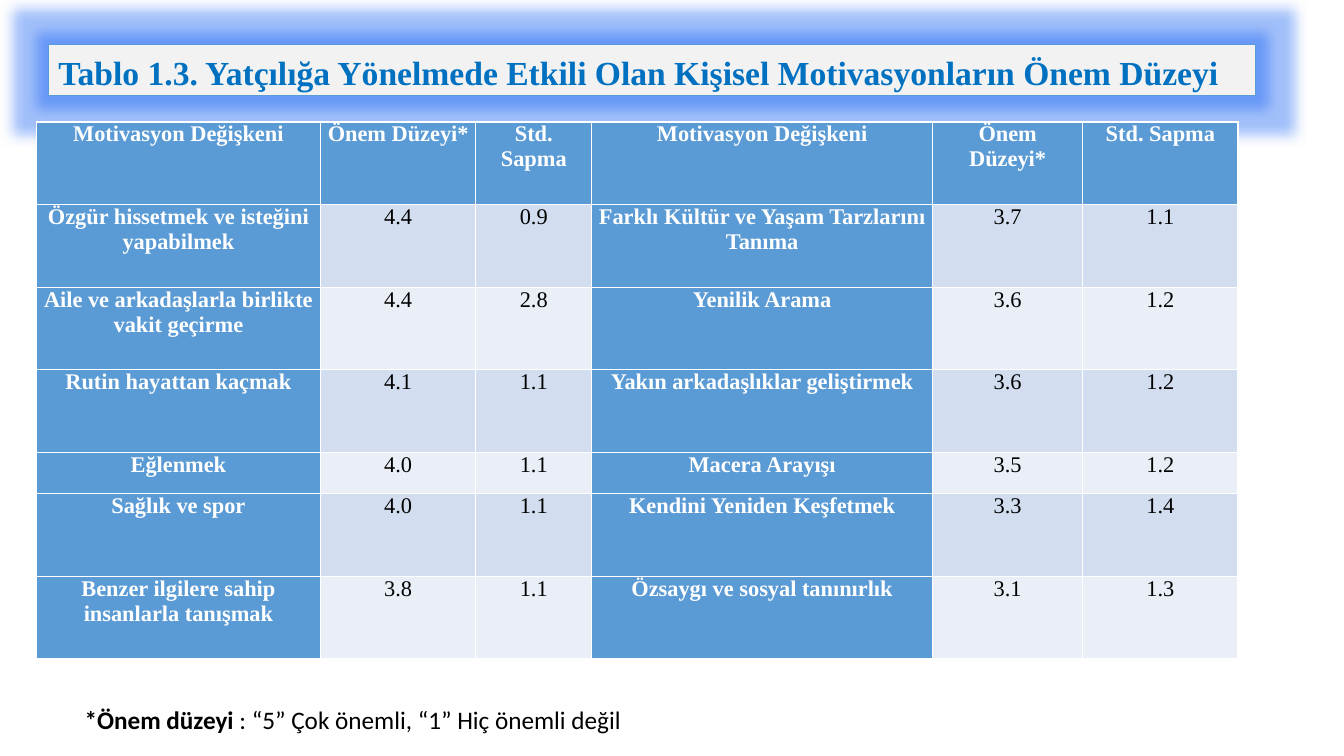
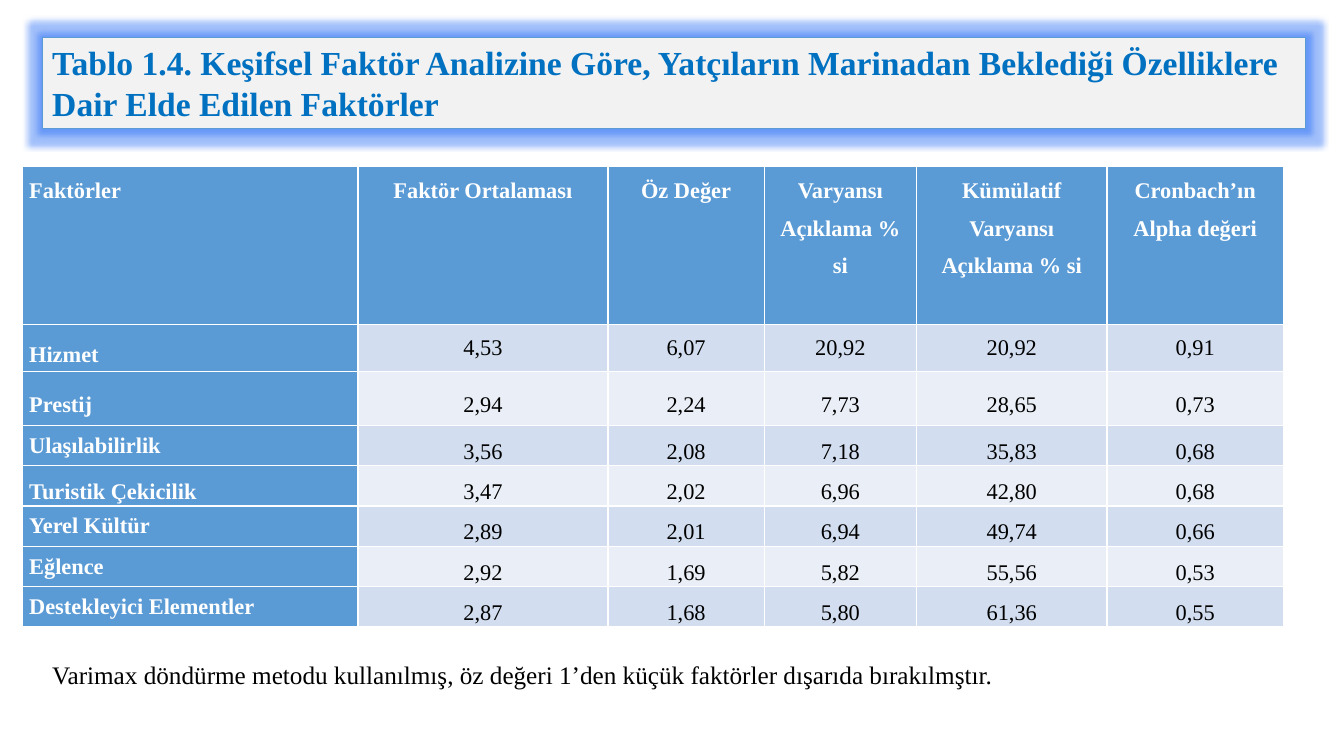
from lxml import etree
from pptx import Presentation
from pptx.dml.color import RGBColor
from pptx.enum.shapes import MSO_SHAPE
from pptx.enum.text import MSO_ANCHOR, MSO_AUTO_SIZE, PP_ALIGN
from pptx.oxml.ns import qn
from pptx.util import Inches, Pt

RECT = MSO_SHAPE.RECTANGLE
TOP, MIDDLE = MSO_ANCHOR.TOP, MSO_ANCHOR.MIDDLE
GROW = MSO_AUTO_SIZE.SHAPE_TO_FIT_TEXT
LEFT, CENTER, JUSTIFY = PP_ALIGN.LEFT, PP_ALIGN.CENTER, PP_ALIGN.JUSTIFY

WHITE = RGBColor(0xFF, 0xFF, 0xFF)
BLACK = RGBColor(0x00, 0x00, 0x00)
BLUE = RGBColor(0x5B, 0x9B, 0xD5)
INK = RGBColor(0x00, 0x70, 0xC0)
GREY = RGBColor(0xF2, 0xF2, 0xF2)
BANDS = RGBColor(0xD2, 0xDE, 0xEF), RGBColor(0xEA, 0xEF, 0xF7)
GLOW = RGBColor(0x14, 0x60, 0xF4)
SERIF, SANS = "Times New Roman", "Calibri"

# Font formats
TITLE = {"name": SERIF, "size": Pt(24), "bold": True, "color": INK}
HEAD = {"name": SERIF, "size": Pt(16), "bold": True, "color": WHITE}
VALUE = {**HEAD, "bold": False, "color": BLACK}
NOTE = {"name": SERIF, "size": Pt(18), "bold": False, "color": BLACK}
PLAIN = {**NOTE, "name": SANS}
STRONG = {**PLAIN, "bold": True}


class Deck:
    def __init__(self):
        self.prs = Presentation()
        self.prs.slide_width = Inches(13.33)
        self.prs.slide_height = Inches(7.5)
        self.slide = None

    def add(self):
        self.slide = self.prs.slides.add_slide(self.prs.slide_layouts[6])

    def fill_para(self, para, runs, **form):
        for key, value in form.items():
            setattr(para, key, value)
        for text, font in runs:
            run = para.add_run()
            run.text = text
            for key, value in font.items():
                if key == "color":
                    run.font.color.rgb = value
                else:
                    setattr(run.font, key, value)

    def frame(self, shape, runs, **form):
        text = shape.text_frame
        text.word_wrap = True
        text.auto_size = GROW
        text.vertical_anchor = TOP
        self.fill_para(text.paragraphs[0], runs, **form)

    def title(self, text, box, glow, **form):
        shape = self.slide.shapes.add_shape(RECT, *map(Inches, box))
        shape.fill.solid()
        shape.fill.fore_color.rgb = GREY
        shape.line.color.rgb = BLUE
        shape.line.width = Pt(0.75)
        # Soft glow around the band
        shape.shadow.inherit = False
        effect = shape._element.spPr.find(qn("a:effectLst"))
        halo = etree.SubElement(effect, qn("a:glow"), rad=str(Pt(glow)))
        color = etree.SubElement(halo, qn("a:srgbClr"), val=str(GLOW))
        etree.SubElement(color, qn("a:alpha"), val="40000")
        self.frame(shape, [(text, TITLE)], **form)

    def note(self, runs, box):
        shape = self.slide.shapes.add_textbox(*map(Inches, box))
        self.frame(shape, runs, alignment=LEFT)

    def table(self, rows, left, top, widths, heights, labels,
              side=CENTER, anchor=TOP, gaps=None):
        """gaps holds a (label, value) line spacing for each row."""
        gaps = gaps or [(1.0, 1.0)] * len(rows)
        grid = self.slide.shapes.add_table(
            len(rows), len(widths), Inches(left), Inches(top),
            Inches(sum(widths)), Inches(sum(heights))).table
        for col, width in zip(grid.columns, widths):
            col.width = Inches(width)
        for row, height in zip(grid.rows, heights):
            row.height = Inches(height)
        for i, row in enumerate(rows):
            for j, text in enumerate(row):
                cell = grid.cell(i, j)
                label = j in labels
                dark = i == 0 or label
                cell.margin_left = cell.margin_right = Inches(0.07)
                cell.margin_top = cell.margin_bottom = 0
                cell.vertical_anchor = anchor if i else TOP
                cell.fill.solid()
                cell.fill.fore_color.rgb = BLUE if dark else BANDS[(i - 1) % 2]
                self.fill_para(cell.text_frame.paragraphs[0],
                               [(text, HEAD if dark else VALUE)],
                               alignment=side if label else CENTER,
                               line_spacing=gaps[i][0 if label else 1])


MOTIVES = [
    ("Motivasyon Değişkeni", "Önem Düzeyi*", "Std. Sapma") * 2,
    ("Özgür hissetmek ve isteğini yapabilmek", "4.4", "0.9",
     "Farklı Kültür ve Yaşam Tarzlarını Tanıma", "3.7", "1.1"),
    ("Aile ve arkadaşlarla birlikte vakit geçirme", "4.4", "2.8",
     "Yenilik Arama", "3.6", "1.2"),
    ("Rutin hayattan kaçmak", "4.1", "1.1",
     "Yakın arkadaşlıklar geliştirmek", "3.6", "1.2"),
    ("Eğlenmek", "4.0", "1.1", "Macera Arayışı", "3.5", "1.2"),
    ("Sağlık ve spor", "4.0", "1.1",
     "Kendini Yeniden Keşfetmek", "3.3", "1.4"),
    ("Benzer ilgilere sahip insanlarla tanışmak", "3.8", "1.1",
     "Özsaygı ve sosyal tanınırlık", "3.1", "1.3"),
]

FACTORS = [
    ("Faktörler", "Faktör Ortalaması", "Öz Değer", "Varyansı Açıklama % si",
     "Kümülatif Varyansı Açıklama % si", "Cronbach’ın Alpha değeri"),
    ("Hizmet", "4,53", "6,07", "20,92", "20,92", "0,91"),
    ("Prestij", "2,94", "2,24", "7,73", "28,65", "0,73"),
    ("Ulaşılabilirlik", "3,56", "2,08", "7,18", "35,83", "0,68"),
    ("Turistik Çekicilik", "3,47", "2,02", "6,96", "42,80", "0,68"),
    ("Yerel Kültür", "2,89", "2,01", "6,94", "49,74", "0,66"),
    ("Eğlence", "2,92", "1,69", "5,82", "55,56", "0,53"),
    ("Destekleyici Elementler", "2,87", "1,68", "5,80", "61,36", "0,55"),
]


def main():
    deck = Deck()

    # Personal motives
    deck.add()
    deck.title("Tablo 1.3. Yatçılığa Yönelmede Etkili Olan Kişisel "
               "Motivasyonların Önem Düzeyi", (0.48, 0.44, 11.97, 0.51), 18,
               alignment=JUSTIFY, line_spacing=1.07, space_after=Pt(8))
    deck.note([("*Önem düzeyi", STRONG),
               (" : “5” Çok önemli, “1” Hiç önemli değil", PLAIN)],
              (0.74, 6.94, 6.56, 0.4))
    deck.table(MOTIVES, 0.36, 1.21, [2.82, 1.54, 1.15, 3.38, 1.49, 1.54],
               [0.82] * 4 + [0.41] + [0.82] * 2, labels=(0, 3))

    # Factor analysis
    deck.add()
    deck.title("Tablo 1.4. Keşifsel Faktör Analizine Göre, Yatçıların "
               "Marinadan Beklediği Özelliklere Dair Elde Edilen Faktörler",
               (0.42, 0.37, 12.53, 0.91), 8, alignment=LEFT)
    wide, mixed = (1.5, 1.5), (1.0, 1.5)
    deck.table(FACTORS, 0.22, 1.65, [3.33, 2.48, 1.55, 1.51, 1.89, 1.75],
               [1.57, 0.47, 0.53] + [0.4] * 5, labels=(0,), side=LEFT,
               anchor=MIDDLE,
               gaps=[wide, (1.5, 1.0), wide, mixed, wide] + [mixed] * 3)
    deck.note([("Varimax döndürme metodu kullanılmış, öz değeri 1’den küçük "
                "faktörler dışarıda bırakılmştır.", NOTE)],
              (0.42, 6.49, 12.53, 0.4))

    deck.prs.save("out.pptx")


if __name__ == "__main__":
    main()
